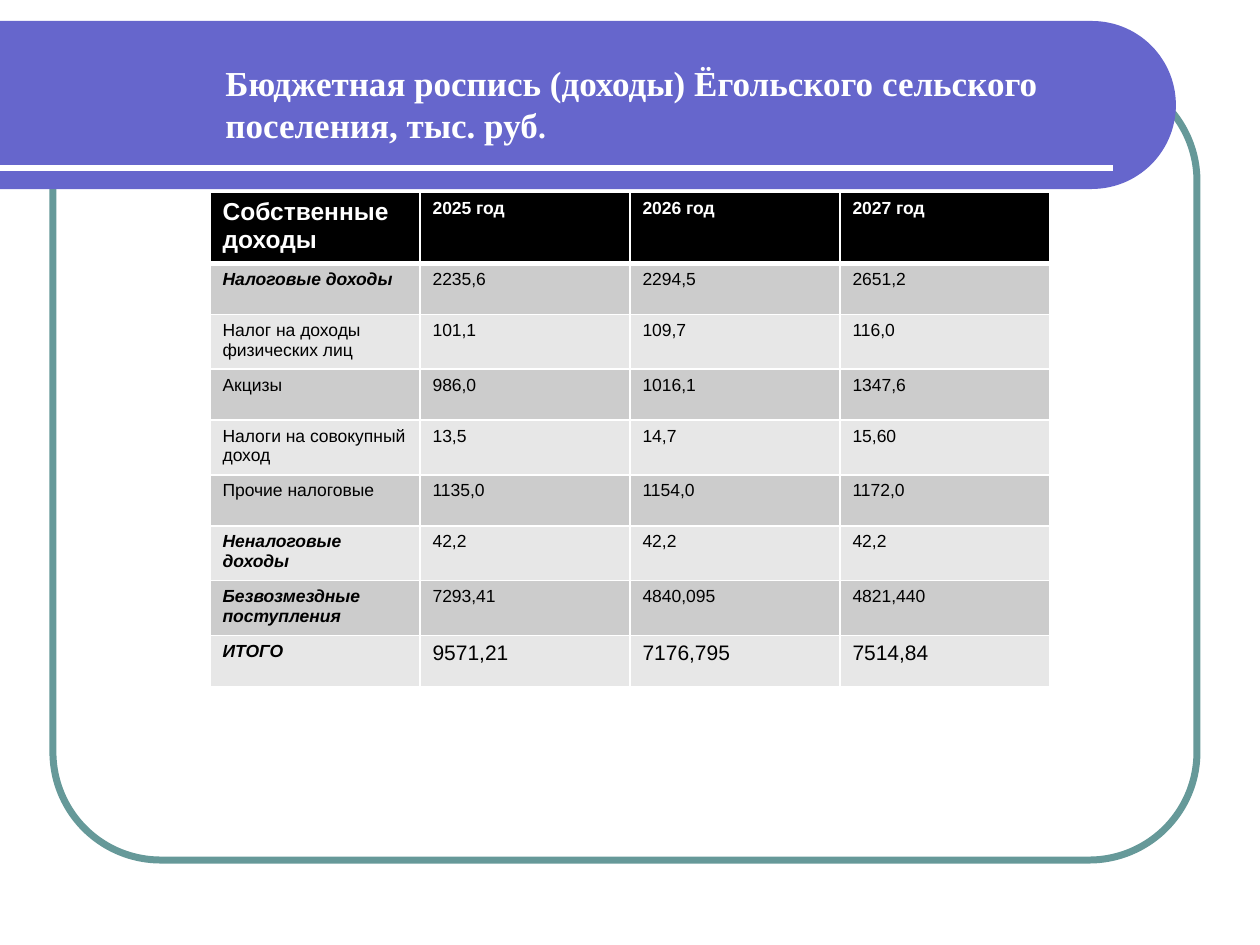
from math import cos, pi, sin

from lxml.etree import SubElement
from pptx import Presentation
from pptx.dml.color import RGBColor
from pptx.enum.shapes import MSO_CONNECTOR, MSO_SHAPE
from pptx.enum.text import MSO_AUTO_SIZE
from pptx.oxml.ns import qn
from pptx.util import Emu, Pt

PX = 914400 // 126
COLORS = {
    "frame": "669999", "banner": "6666CC", "white": "FFFFFF", "black": "000000",
    "odd": "CCCCCC", "even": "E7E7E7",
}

TITLE = "Бюджетная роспись (доходы) Ёгольского сельского поселения, тыс. руб"
HEADER = ("Собственные доходы", "2025 год", "2026 год", "2027 год")
ROWS = [
    ("Налоговые доходы", "2235,6", "2294,5", "2651,2"),
    ("Налог на доходы физических лиц", "101,1", "109,7", "116,0"),
    ("Акцизы", "986,0", "1016,1", "1347,6"),
    ("Налоги на совокупный доход", "13,5", "14,7", "15,60"),
    ("Прочие налоговые", "1135,0", "1154,0", "1172,0"),
    ("Неналоговые доходы", "42,2", "42,2", "42,2"),
    ("Безвозмездные поступления", "7293,41", "4840,095", "4821,440"),
    ("ИТОГО", "9571,21", "7176,795", "7514,84"),
]
TOTAL = "ИТОГО"
GROUPS = {"Налоговые доходы", "Неналоговые доходы", "Безвозмездные поступления", TOTAL}

FRAME = (53, 73, 1144, 787)
BANNER_LEFT, BANNER_TOP, BANNER_WIDTH, BANNER_HEIGHT = 0, 21, 1176, 168
RULE_Y, RULE_END = 168, 1113
TITLE_BOX = (213, 55, 883, 97)
TABLE_LEFT, TABLE_TOP, COLUMN_WIDTH, ROW_HEIGHT = 210, 192, 210, 51


def px(*lengths):
    return [Emu(length * PX) for length in lengths]


def color(name):
    return RGBColor.from_string(COLORS[name])


def paint(fill, name):
    fill.solid()
    fill.fore_color.rgb = color(name)


def stroke(line, name, width):
    line.color.rgb = color(name)
    line.width = Pt(width)


def add_text(para, text, size=10, font="Arial", ink="black", bold=False, italic=False):
    span = para.add_run()
    span.text = text
    span.font.size = Pt(size)
    span.font.name = font
    span.font.bold = bold
    span.font.italic = italic
    span.font.color.rgb = color(ink)


def add_frame(page):
    frame = page.shapes.add_shape(MSO_SHAPE.ROUNDED_RECTANGLE, *px(*FRAME))
    frame.adjustments[0] = 0.137
    frame.shadow.inherit = False
    frame.fill.background()
    stroke(frame.line, "frame", 4)


def add_banner(page, steps=60):
    """Draw a band with a square left end and a half-round right end."""
    radius = BANNER_HEIGHT // 2
    center_x = BANNER_LEFT + BANNER_WIDTH - radius
    center_y = BANNER_TOP + radius
    angles = [pi * step / steps - pi / 2 for step in range(steps + 1)]
    points = [(round((center_x + radius * cos(angle)) * PX),
               round((center_y + radius * sin(angle)) * PX)) for angle in angles]
    points.append(px(BANNER_LEFT, BANNER_TOP + BANNER_HEIGHT))
    builder = page.shapes.build_freeform(*px(BANNER_LEFT, BANNER_TOP))
    builder.add_line_segments(points, close=True)
    banner = builder.convert_to_shape()
    banner.shadow.inherit = False
    paint(banner.fill, "banner")
    banner.line.fill.background()


def add_rule(page):
    rule = page.shapes.add_connector(
        MSO_CONNECTOR.STRAIGHT, *px(0, RULE_Y, RULE_END, RULE_Y))
    stroke(rule.line, "white", 3)
    SubElement(rule._element.spPr, qn("a:effectLst"))


def add_title(page):
    box = page.shapes.add_textbox(*px(*TITLE_BOX))
    box.text_frame.word_wrap = True
    box.text_frame.auto_size = MSO_AUTO_SIZE.SHAPE_TO_FIT_TEXT
    para = box.text_frame.paragraphs[0]
    for text, size in ((TITLE, 20), (".", 18)):
        add_text(para, text, size=size, font="Times New Roman", ink="white", bold=True)


def add_borders(cell, bottom=1):
    properties = cell._tc.get_or_add_tcPr()
    for side, width in (("L", 1), ("R", 1), ("T", 1), ("B", bottom)):
        line = SubElement(properties, qn(f"a:ln{side}"), w=str(Pt(width)))
        fill = SubElement(line, qn("a:solidFill"))
        SubElement(fill, qn("a:srgbClr"), val=COLORS["white"])


def cell_format(row, column, label):
    if row == 0:
        return dict(size=10 if column else 14, ink="white", bold=True)
    if column:
        return dict(size=12 if label == TOTAL else 10)
    return dict(bold=label in GROUPS, italic=label in GROUPS)


def add_budget(page):
    lines = [HEADER, *ROWS]
    table = page.shapes.add_table(
        len(lines), len(HEADER),
        *px(TABLE_LEFT, TABLE_TOP, COLUMN_WIDTH * len(HEADER), ROW_HEIGHT * len(lines))).table
    for row, line in enumerate(lines):
        background = "black" if row == 0 else "odd" if row % 2 else "even"
        for column, text in enumerate(line):
            cell = table.cell(row, column)
            add_borders(cell, bottom=1 if row else 3)
            paint(cell.fill, background)
            add_text(cell.text_frame.paragraphs[0], text,
                     **cell_format(row, column, line[0]))


def main():
    deck = Presentation()
    deck.slide_width, deck.slide_height = px(1260, 945)
    page = deck.slides.add_slide(deck.slide_layouts[6])
    for add_part in (add_frame, add_banner, add_rule, add_title, add_budget):
        add_part(page)
    deck.save("out.pptx")


if __name__ == "__main__":
    main()
